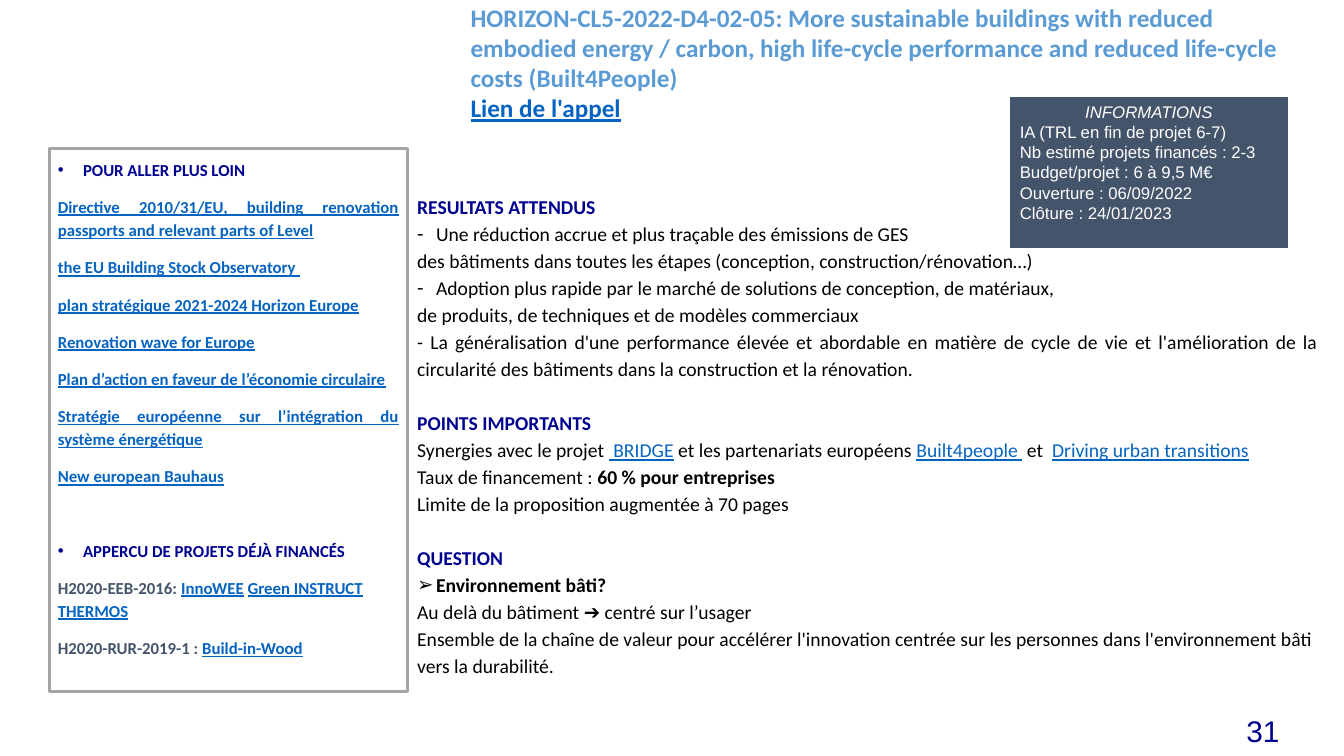
from collections import namedtuple
from dataclasses import dataclass

from lxml.etree import SubElement
from pptx import Presentation
from pptx.dml.color import RGBColor
from pptx.enum.shapes import MSO_SHAPE as Preset
from pptx.enum.text import MSO_ANCHOR as Anchor, PP_ALIGN as Align
from pptx.oxml.ns import qn
from pptx.util import Pt


@dataclass(frozen=True)
class Theme:
    body_font: str = "Calibri"
    label_font: str = "Arial"
    navy: str = "000091"
    link: str = "0563C1"
    sky: str = "5B9BD5"
    slate: str = "44546A"
    grey: str = "A5A5A5"
    black: str = "000000"
    white: str = "FFFFFF"
    title_size: float = 18
    main_size: float = 14
    side_size: float = 12
    info_size: float = 12
    number_size: float = 21.3


THEME = Theme()
Style = namedtuple("Style", "color bold underline italic", defaults=(False, False, False))
Para = namedtuple("Para", "runs align bullet before", defaults=(Align.LEFT, None, 0))

HEADING = Style(THEME.navy, bold=True)
PLAIN = Style(THEME.black)
STRONG = Style(THEME.black, bold=True)
LINK = Style(THEME.link, underline=True)
BOLD_LINK = Style(THEME.link, bold=True, underline=True)
LABEL = Style(THEME.slate, bold=True)
INFO = Style(THEME.white)
SIDE_GAP, SIDE_SECTION_GAP = 10, 36.4
MAIN_SECTION_GAP = 19.3


def justified(text, style=PLAIN, bullet=None, before=0):
    return Para([(text, style)], Align.JUSTIFY, bullet, before)


TITLE = [
    Para([("HORIZON-CL5-2022-D4-02-05: More sustainable buildings with reduced embodied "
           "energy / carbon, high life-cycle performance and reduced life-cycle costs "
           "(Built4People)", Style(THEME.sky, bold=True))]),
    Para([("Lien de l'appel", BOLD_LINK)]),
]
INFORMATIONS = [
    Para([("INFORMATIONS", Style(THEME.white, italic=True))], Align.CENTER),
    *[Para([(line, INFO)]) for line in (
        "IA (TRL en fin de projet 6-7)",
        "Nb estimé projets financés : 2-3",
        "Budget/projet : 6 à 9,5 M€",
        "Ouverture : 06/09/2022",
        "Clôture : 24/01/2023",
    )],
]
MAIN = [
    justified("RESULTATS ATTENDUS", HEADING),
    justified("Une réduction accrue et plus traçable des émissions de GES", bullet="-"),
    justified("des bâtiments dans toutes les étapes (conception, construction/rénovation…)"),
    justified("Adoption plus rapide par le marché de solutions de conception, de matériaux,",
              bullet="-"),
    justified("de produits, de techniques et de modèles commerciaux"),
    justified("- La généralisation d'une performance élevée et abordable en matière de cycle "
              "de vie et l'amélioration de la circularité des bâtiments dans la construction "
              "et la rénovation."),
    justified("POINTS IMPORTANTS", HEADING, before=MAIN_SECTION_GAP),
    Para([("Synergies avec le projet ", PLAIN), (" BRIDGE", LINK),
          (" et les partenariats européens ", PLAIN), ("Built4people ", LINK),
          (" et  ", PLAIN), ("Driving urban transitions", LINK)], Align.JUSTIFY),
    Para([("Taux de financement : ", PLAIN), ("60 % pour entreprises", STRONG)], Align.JUSTIFY),
    justified("Limite de la proposition augmentée à 70 pages"),
    justified("QUESTION", HEADING, before=MAIN_SECTION_GAP),
    Para([("Environnement bâti?", STRONG)], bullet="➢"),
    Para([("Au delà du bâtiment ➔ centré sur l’usager", PLAIN)]),
    Para([("Ensemble de la chaîne de valeur pour accélérer l'innovation centrée sur les "
           "personnes dans l'environnement bâti vers la durabilité.", PLAIN)]),
]
SIDE = [
    justified("POUR ALLER PLUS LOIN", HEADING, bullet="•"),
    *[justified(name, BOLD_LINK, before=SIDE_GAP) for name in (
        "Directive 2010/31/EU, building renovation passports and relevant parts of Level",
        "the EU Building Stock Observatory ",
        "plan stratégique 2021-2024 Horizon Europe",
        "Renovation wave for Europe",
        "Plan d’action en faveur de l’économie circulaire",
        "Stratégie européenne sur l’intégration du système énergétique",
        "New european Bauhaus",
    )],
    Para([("APPERCU DE PROJETS DÉJÀ FINANCÉS", HEADING)], bullet="•", before=SIDE_SECTION_GAP),
    Para([("H2020-EEB-2016: ", LABEL), ("InnoWEE", BOLD_LINK), (" ", LABEL),
          ("Green INSTRUCT", BOLD_LINK), (" ", LABEL), ("THERMOS", BOLD_LINK)],
         before=SIDE_GAP),
    Para([("H2020-RUR-2019-1 : ", LABEL), ("Build-in-Wood", BOLD_LINK)], before=SIDE_GAP),
]
NUMBER = [Para([("31", Style(THEME.navy))], Align.RIGHT)]

# left, top, width, height in points
NUMBER_BOX = (797.8, 504, 123.1, 36)
INFO_BOX = (721.4, 69.1, 198.7, 108.7)
MAIN_BOX = (290.9, 133.2, 658.1, 378)
TITLE_BOX = (329, -2.2, 605.5, 94.3)
SIDE_BOX = (35.3, 105.8, 255.6, 388.1)


def apply_style(font, style):
    font.color.rgb = RGBColor.from_string(style.color)
    font.bold, font.underline, font.italic = style.bold, style.underline, style.italic


def add_bullet(paragraph, character, indent):
    properties = paragraph._p.get_or_add_pPr()
    properties.set("marL", str(Pt(indent)))
    properties.set("indent", str(-Pt(indent)))
    SubElement(properties, qn("a:buFont")).set("typeface", THEME.label_font)
    SubElement(properties, qn("a:buChar")).set("char", character)


def fill_text(shape, paras, font_name, size, spacing=1.0, indent=0):
    frame = shape.text_frame
    frame.word_wrap = True
    frame.vertical_anchor = Anchor.TOP
    for index, para in enumerate(paras):
        paragraph = frame.add_paragraph() if index else frame.paragraphs[0]
        paragraph.alignment = para.align
        paragraph.line_spacing = spacing
        paragraph.space_before = Pt(para.before)
        if para.bullet:
            add_bullet(paragraph, para.bullet, indent)
        paragraph.font.name, paragraph.font.size = font_name, Pt(size)
        for text, style in para.runs:
            run = paragraph.add_run()
            run.text = text
            apply_style(paragraph.font if len(para.runs) == 1 else run.font, style)
    return frame


def add_text(slide, box, *text, **layout):
    return fill_text(slide.shapes.add_textbox(*map(Pt, box)), *text, **layout)


def add_panel(slide, box, fill, line, line_width):
    panel = slide.shapes.add_shape(Preset.RECTANGLE, *map(Pt, box))
    panel.shadow.inherit = False
    if fill:
        panel.fill.solid()
        panel.fill.fore_color.rgb = RGBColor.from_string(fill)
    else:
        panel.fill.background()
    panel.line.color.rgb = RGBColor.from_string(line)
    panel.line.width = Pt(line_width)
    return panel


def main():
    presentation = Presentation()
    presentation.slide_width, presentation.slide_height = Pt(960), Pt(540)
    slide = presentation.slides.add_slide(presentation.slide_layouts[6])

    number = add_text(slide, NUMBER_BOX, NUMBER, THEME.label_font, THEME.number_size)
    number.vertical_anchor = Anchor.MIDDLE

    info = add_panel(slide, INFO_BOX, THEME.slate, THEME.white, 0.75)
    fill_text(info, INFORMATIONS, THEME.label_font, THEME.info_size)

    add_text(slide, MAIN_BOX, MAIN, THEME.body_font, THEME.main_size, spacing=1.15, indent=13.5)
    add_text(slide, TITLE_BOX, TITLE, THEME.body_font, THEME.title_size)

    side = add_panel(slide, SIDE_BOX, None, THEME.grey, 2)
    frame = fill_text(side, SIDE, THEME.body_font, THEME.side_size, spacing=1.15, indent=18)
    frame.margin_left = frame.margin_top = frame.margin_right = frame.margin_bottom = Pt(6)

    presentation.save("out.pptx")


if __name__ == "__main__":
    main()
